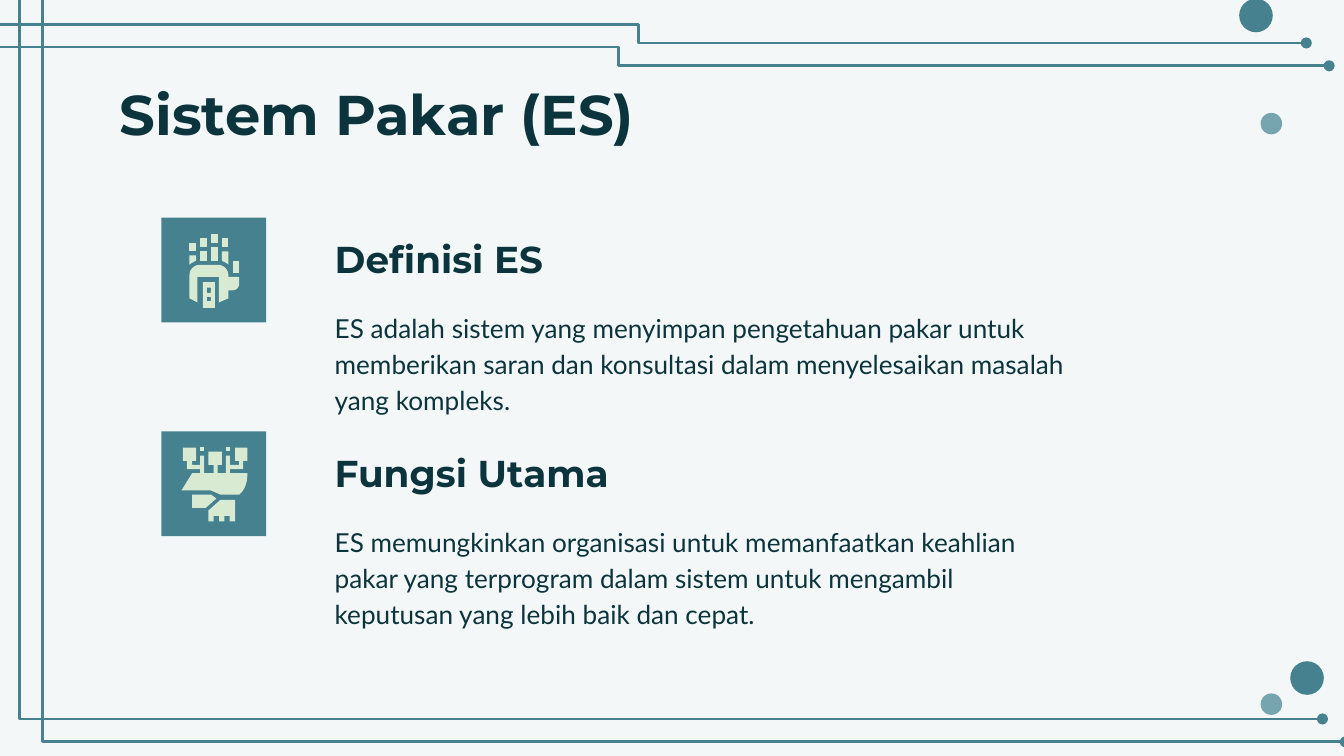
import dataclasses
import lxml.etree
import pptx
import pptx.dml.color
import pptx.enum.shapes
import pptx.enum.text
import pptx.oxml.ns
import pptx.util

Inches = pptx.util.Inches
Shape = pptx.enum.shapes.MSO_SHAPE
Anchor = pptx.enum.text.MSO_ANCHOR
qn = pptx.oxml.ns.qn


@dataclasses.dataclass(frozen=True)
class Theme:
    back: str = "F3F7F8"
    teal: str = "45818E"
    mist: str = "76A5AF"
    pale: str = "D9EAD3"
    ink: str = "0C343D"
    title: tuple = ("Montserrat", 30, True)
    head: tuple = ("Montserrat", 20, True)
    body: tuple = ("Lato", 14, False)
    line: float = 1.5


THEME = Theme()


def block(x, y, wide, high):
    return [(x, y), (x, y + high), (x + wide, y + high), (x + wide, y)]


ROBOT = [
    [block(31, 48, 9, 19), block(34, 52, 3, 4), block(34, 59, 3, 3)],
    [block(21, 19, 5, 6)],
    [block(29, 15, 5, 7)],
    [block(37, 12, 5, 7)],
    [block(45, 15, 5, 7)],
    [block(29, 25, 5, 7)],
    [block(37, 22, 5, 10)],
    [block(53, 32, 5, 9)],
    [[(21, 28), (21, 35), (22, 34, 24, 33, 26, 32), (26, 28)]],
    [[(45, 25), (45, 32), (47, 33, 49, 34, 50, 35), (50, 25)]],
    [[(29, 35), (25, 35, 21, 38, 21, 43), (21, 60), (27, 63), (27, 44),
      (43, 44), (43, 63), (50, 60), (50, 54), (53, 54),
      (56, 54, 58, 52, 58, 49), (58, 44), (50, 44), (50, 43),
      (50, 38, 46, 35, 42, 35)]],
]
HAND = [
    [[(55, 12), (55, 22), (58, 22), (58, 25), (51, 25), (51, 18), (48, 18),
      (48, 31), (42, 31), (42, 25), (45, 25), (45, 15), (35, 15), (35, 25),
      (39, 25), (39, 31), (32, 31), (32, 18), (29, 18), (29, 25), (23, 25),
      (23, 22), (26, 22), (26, 12), (16, 12), (16, 22), (19, 22), (19, 28),
      (29, 28), (29, 31), (23, 31), (15, 44), (37, 44), (44, 47), (58, 47),
      (62, 44, 64, 38, 64, 33), (64, 31), (51, 31), (51, 28), (61, 28),
      (61, 22), (64, 22), (64, 12)]],
    [block(29, 12, 3, 3)],
    [block(48, 12, 3, 3)],
    [[(44, 51), (35, 59), (35, 67), (39, 67), (39, 63), (43, 63), (43, 67),
      (47, 67), (47, 63), (51, 63), (51, 67), (55, 67), (55, 51)]],
    [[(23, 47), (23, 57), (33, 57), (41, 50), (37, 47)]],
]
ITEMS = [
    (1.62, ROBOT, "Definisi ES",
     "ES adalah sistem yang menyimpan pengetahuan pakar untuk memberikan "
     "saran dan konsultasi dalam menyelesaikan masalah yang kompleks."),
    (3.21, HAND, "Fungsi Utama",
     "ES memungkinkan organisasi untuk memanfaatkan keahlian pakar yang "
     "terprogram dalam sistem untuk mengambil keputusan yang lebih baik "
     "dan cepat."),
]


def tint(name):
    return pptx.dml.color.RGBColor.from_string(name)


def paint(shape, name):
    shape.shadow.inherit = False
    shape.fill.solid()
    shape.fill.fore_color.rgb = tint(name)
    shape.line.fill.background()


def plain(slide, kind, box, name):
    paint(slide.shapes.add_shape(kind, *map(Inches, box)), name)


def write(holder, box, words, style, space=1.0, anchor=Anchor.TOP):
    holder.left, holder.top, holder.width, holder.height = map(Inches, box)
    frame = holder.text_frame
    frame.word_wrap = True
    frame.auto_size = pptx.enum.text.MSO_AUTO_SIZE.NONE
    frame.vertical_anchor = anchor
    frame.margin_left = frame.margin_right = Inches(0.1)
    frame.margin_top = frame.margin_bottom = Inches(0.1)
    para = frame.paragraphs[0]
    para.alignment = pptx.enum.text.PP_ALIGN.LEFT
    para.line_spacing = space
    para.space_before = para.space_after = pptx.util.Pt(0)
    props = para._p.get_or_add_pPr()
    props.set("marL", "0")
    props.set("indent", "0")
    lxml.etree.SubElement(props, qn("a:buNone"))
    run = para.add_run()
    run.text = words
    font = run.font
    font.name, size, font.bold = style
    font.size = pptx.util.Pt(size)
    font.color.rgb = tint(THEME.ink)


def trace(ring):
    points = []
    for step in ring:
        if len(step) == 2:
            points.append(step)
            continue
        ends = [points[-1], step[:2], step[2:4], step[4:]]
        for part in range(1, 9):
            t = part / 8
            rates = ((1 - t) ** 3, 3 * t * (1 - t) ** 2,
                     3 * t * t * (1 - t), t ** 3)
            points.append(tuple(
                sum(r * end[axis] for r, end in zip(rates, ends))
                for axis in (0, 1)))
    return [(x * 100, y * 100) for x, y in points]


def icon(slide, left, top, parts):
    for rings in parts:
        first, *rest = map(trace, rings)
        pen = slide.shapes.build_freeform(*first[0], scale=Inches(1) / 10000)
        pen.add_line_segments(first[1:], close=True)
        for ring in rest:
            pen.move_to(*ring[0])
            pen.add_line_segments(ring[1:], close=True)
        paint(pen.convert_to_shape(Inches(left), Inches(top)), THEME.pale)


def item(slide, left, top, parts, head, body, holders):
    plain(slide, Shape.RECTANGLE, (left, top, 0.78, 0.78), THEME.teal)
    icon(slide, left, top, parts)
    text = left + 1.19
    write(holders[0], (text, top + 0.17, 5.74, 0.4), head, THEME.head,
          1.15, Anchor.BOTTOM)
    write(holders[1], (text, top + 0.57, 5.74, 0.7), body, THEME.body, 1.15)


def wire(slide, left, top, wide, high, bend):
    link = slide.shapes.add_connector(
        pptx.enum.shapes.MSO_CONNECTOR.ELBOW,
        *map(Inches, (left, top, left + wide, top + high)))
    link.line.color.rgb = tint(THEME.teal)
    link.line.width = pptx.util.Pt(THEME.line)
    props = link._element.spPr
    guides = props.find(qn("a:prstGeom")).get_or_add_avLst()
    lxml.etree.SubElement(guides, qn("a:gd"), name="adj1",
                          fmla=f"val {round(bend / wide * 100000)}")
    lxml.etree.SubElement(link.line._get_or_add_ln(), qn("a:tailEnd"),
                          type="oval")
    lxml.etree.SubElement(props, qn("a:effectLst"))


def decor(slide):
    for gap, bend in ((0, 4.99), (0.17, 4.67)):
        wire(slide, 0.07 + gap, -0.65 + gap, 9.77, 6, 0.08)
        wire(slide, -0.24 + gap, 0.18 + gap, 9.96, 0.14, bend)
    for left, top, size, name in (
            (9.38, 5.16, 0.16, THEME.mist), (9.6, 4.92, 0.25, THEME.teal),
            (9.38, 0.84, 0.16, THEME.mist), (9.22, -0.01, 0.25, THEME.teal)):
        plain(slide, Shape.OVAL, (left, top, size, size), name)


def main():
    deck = pptx.Presentation()
    deck.slide_width = Inches(10)
    deck.slide_height = deck.slide_width * 9 // 16
    slide = deck.slides.add_slide(deck.slide_layouts.get_by_name("Comparison"))
    slide.background.fill.solid()
    slide.background.fill.fore_color.rgb = tint(THEME.back)
    decor(slide)
    title, *holders = slide.placeholders
    write(title, (0.79, 0.49, 8.43, 0.63), "Sistem Pakar (ES)", THEME.title)
    for row, (top, parts, head, body) in enumerate(ITEMS):
        item(slide, 1.2, top, parts, head, body,
             holders[2 * row:2 * row + 2])
    deck.save("out.pptx")


if __name__ == "__main__":
    main()
